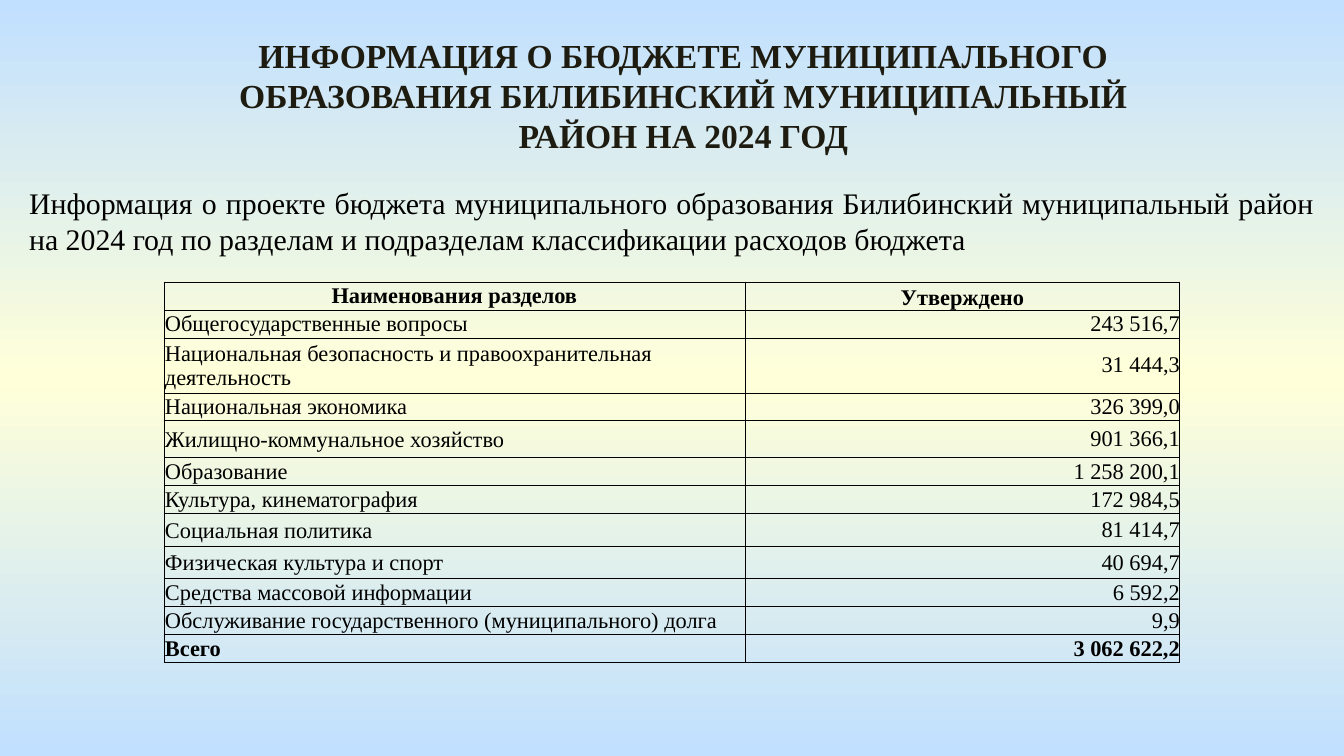
from copy import deepcopy
from lxml import etree
from pptx import Presentation
from pptx.dml.color import RGBColor
from pptx.enum.text import MSO_ANCHOR, PP_ALIGN
from pptx.oxml.ns import qn
from pptx.util import Pt

LEFT, MID, RIGHT, JUST = PP_ALIGN.LEFT, PP_ALIGN.CENTER, PP_ALIGN.RIGHT, PP_ALIGN.JUSTIFY
CENTRE, BASE = MSO_ANCHOR.MIDDLE, MSO_ANCHOR.BOTTOM
PX = 914400 / 134.4
THEME = {
    "font": "Times New Roman",
    "head": 18, "lead": 16, "cell": 12,
    "dark": "1E1C11", "ink": "000000",
    "sky": "C1E0FF", "sun": "FFFFD9",
}


def px(*sizes):
    return [round(size * PX) for size in sizes]


def write(frame, text, size, align, color="ink", bold=False):
    para = frame.paragraphs[0]
    para.alignment = align
    run = para.add_run()
    run.text = text
    look = {"name": THEME["font"], "size": Pt(THEME[size]), "bold": bold}
    for key, value in look.items():
        setattr(run.font, key, value)
    run.font.color.rgb = RGBColor.from_string(THEME[color])


deck = Presentation()
deck.slide_width, deck.slide_height = px(1344, 756)
slide = deck.slides.add_slide(deck.slide_layouts[6])

# Background: sky, sun, sky from top to bottom
fill = slide.background.fill
fill.gradient()
fill.gradient_angle = 270
stops = slide.element.find(".//" + qn("a:gsLst"))
stops.insert(1, deepcopy(stops[0]))
for stop, place, tone in zip(fill.gradient_stops, (0, 0.5, 1), ("sky", "sun", "sky")):
    stop.position = place
    stop.color.rgb = RGBColor.from_string(THEME[tone])

# Title and lead text
TEXTS = [
    ((164, 28, 1039, 136), "ИНФОРМАЦИЯ О БЮДЖЕТЕ МУНИЦИПАЛЬНОГО ОБРАЗОВАНИЯ "
     "БИЛИБИНСКИЙ МУНИЦИПАЛЬНЫЙ РАЙОН НА 2024 ГОД", "head", MID, "dark", True),
    ((16, 178, 1312, 86), "Информация о проекте бюджета муниципального образования "
     "Билибинский муниципальный район на 2024 год по разделам и подразделам "
     "классификации расходов бюджета", "lead", JUST, "ink", False),
]
for place, *style in TEXTS:
    frame = slide.shapes.add_textbox(*px(*place)).text_frame
    frame.word_wrap = True
    write(frame, *style)

# Budget table: name, sum, row height
ROWS = [
    ("Наименования разделов", "Утверждено", 28),
    ("Общегосударственные вопросы", "243 516,7", 28),
    ("Национальная безопасность и правоохранительная деятельность", "31 444,3", 55),
    ("Национальная экономика", "326 399,0", 28),
    ("Жилищно-коммунальное хозяйство", "901 366,1", 37),
    ("Образование", "1 258 200,1", 28),
    ("Культура, кинематография", "172 984,5", 28),
    ("Социальная политика", "81 414,7", 33),
    ("Физическая культура и спорт", "40 694,7", 32),
    ("Средства массовой информации", "6 592,2", 28),
    ("Обслуживание государственного (муниципального) долга", "9,9", 28),
    ("Всего", "3 062 622,2", 28),
]
high = sum(row[2] for row in ROWS)
table = slide.shapes.add_table(len(ROWS), 2, *px(164, 282, 1016, high)).table
table.first_row = table.horz_banding = False
for col, width in zip(table.columns, px(581, 435)):
    col.width = width

for r, (*texts, tall) in enumerate(ROWS):
    table.rows[r].height = px(tall)[0]
    for c, text in enumerate(texts):
        cell = table.cell(r, c)
        top = r == 0
        pad = px(1 if top or c == 0 else 0)[0]
        form = {
            "margin_left": pad, "margin_right": pad, "margin_top": pad, "margin_bottom": 0,
            "vertical_anchor": BASE if top and c else CENTRE,
        }
        for key, value in form.items():
            setattr(cell, key, value)
        align = MID if top else (LEFT, RIGHT)[c]
        write(cell.text_frame, text, "cell", align, bold=r in (0, len(ROWS) - 1))

        # Thin borders go ahead of the fill
        props = cell._tc.get_or_add_tcPr()
        for side in ("lnL", "lnR", "lnT", "lnB"):
            line = etree.SubElement(props, qn("a:" + side), w=str(Pt(0.5)))
            paint = etree.SubElement(line, qn("a:solidFill"))
            etree.SubElement(paint, qn("a:srgbClr"), val=THEME["ink"])
        cell.fill.background()

deck.save("out.pptx")
